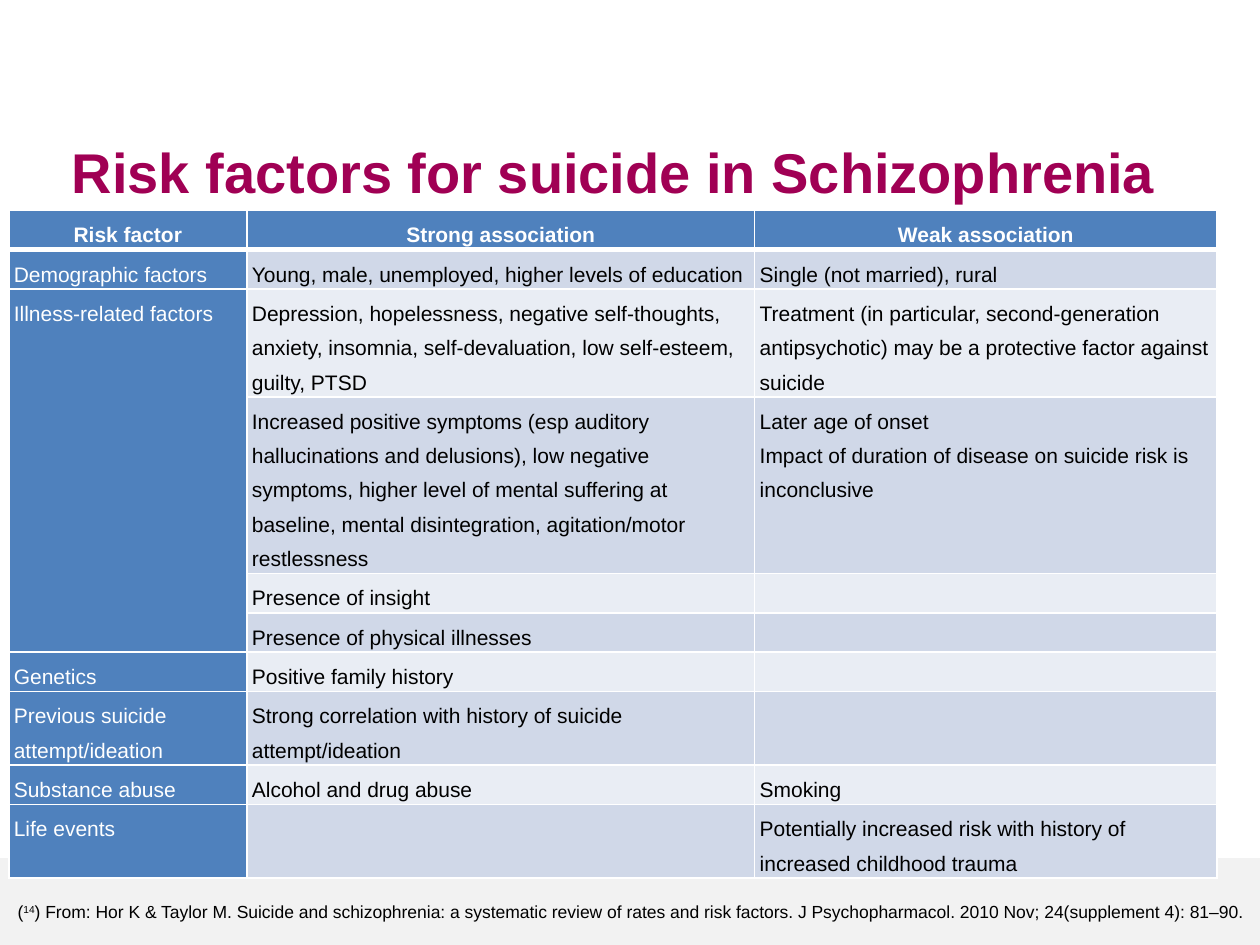
"""Build a slide with a table of risk factors for suicide in schizophrenia."""
import pptx
import pptx.util
import pptx.dml.color
import pptx.enum.shapes
import pptx.enum.text
import pptx.oxml
from lxml import etree

Inches, Pt = pptx.util.Inches, pptx.util.Pt
ALIGN = pptx.enum.text.PP_ALIGN
MIDDLE = pptx.enum.text.MSO_ANCHOR.MIDDLE

TITLE = "Risk factors for suicide in Schizophrenia"
HEADER = ("Risk factor", "Strong association", "Weak association")
ROWS = [
    (1, "Demographic factors", "Young, male, unemployed, higher levels of education",
     "Single (not married), rural"),
    (3, "Illness-related factors",
     "Depression, hopelessness, negative self-thoughts, anxiety, insomnia, "
     "self-devaluation, low self-esteem, guilty, PTSD",
     "Treatment (in particular, second-generation antipsychotic) may be a "
     "protective factor against suicide"),
    (5, "",
     "Increased positive symptoms (esp auditory hallucinations and delusions), "
     "low negative symptoms, higher level of mental suffering at baseline, "
     "mental disintegration, agitation/motor restlessness",
     "Later age of onset\nImpact of duration of disease on suicide risk is inconclusive"),
    (1, "", "Presence of insight", ""),
    (1, "", "Presence of physical illnesses", ""),
    (1, "Genetics", "Positive family history", ""),
    (2, "Previous suicide attempt/ideation",
     "Strong correlation with history of suicide attempt/ideation", ""),
    (1, "Substance abuse", "Alcohol and drug abuse", "Smoking"),
    (2, "Life events", "",
     "Potentially increased risk with history of increased childhood trauma"),
]
MERGED = ((2, 0), (5, 0))
SOURCE = [
    ("(", False),
    ("14", True),
    (") From: Hor K & Taylor M. Suicide and schizophrenia: a systematic review of rates "
     "and risk factors. J Psychopharmacol. 2010 Nov; 24(supplement 4): 81–90.", False),
]
COLORS = {"title": "A00054", "head": "4F81BD", "odd": "D0D8E8", "even": "E9EDF4",
          "white": "FFFFFF", "text": "000000", "footer": "F2F2F2"}
COLS = (1.89, 4.03, 3.67)
LINE = 19.6
PAD_X, PAD_Y = 0.04, 0.02


def rgb(name):
    return pptx.dml.color.RGBColor.from_string(COLORS[name])


def add_run(p, text, size, color, bold=False):
    r = p.add_run()
    r.text = text
    r.font.name, r.font.size, r.font.bold = "Arial", Pt(size), bold
    r.font.color.rgb = rgb(color)
    return r


def set_borders(cell, top, bottom):
    tc_pr = cell._tc.get_or_add_tcPr()
    for side, width in (("L", 1), ("R", 1), ("T", top), ("B", bottom)):
        ln = etree.SubElement(tc_pr, pptx.oxml.ns.qn(f"a:ln{side}"), w=str(Pt(width)))
        fill = etree.SubElement(ln, pptx.oxml.ns.qn("a:solidFill"))
        etree.SubElement(fill, pptx.oxml.ns.qn("a:srgbClr"), val=COLORS["white"])


def fill_cell(cell, text, row, col):
    head = row == 0
    set_borders(cell, 3 if row == 1 else 1, 3 if head else 1)
    cell.fill.solid()
    cell.fill.fore_color.rgb = rgb("head" if head or col == 0 else "odd" if row % 2 else "even")
    cell.margin_left = cell.margin_right = Inches(PAD_X)
    cell.margin_top = cell.margin_bottom = Inches(PAD_Y)
    p = cell.text_frame.paragraphs[0]
    p.alignment = ALIGN.CENTER if head else ALIGN.LEFT
    p.line_spacing = Pt(LINE)
    p.font.size = Pt(12)
    for i, part in enumerate(text.split("\n") if text else []):
        if i:
            p.add_line_break()
        add_run(p, part, 12, "white" if head or col == 0 else "text", head)


def add_risk_table(s):
    rows = [(1, *HEADER)] + ROWS
    heights = [Inches(2 * PAD_Y) + Pt(LINE * row[0]) for row in rows]
    table = s.shapes.add_table(len(rows), len(COLS), Inches(0.07), Inches(1.67),
                               Inches(sum(COLS)), sum(heights)).table
    for column, width in zip(table.columns, COLS):
        column.width = Inches(width)
    for i, (height, (_, *texts)) in enumerate(zip(heights, rows)):
        table.rows[i].height = height
        for j, text in enumerate(texts):
            fill_cell(table.cell(i, j), text, i, j)
    first, last = MERGED
    table.cell(*first).merge(table.cell(*last))


def main():
    prs = pptx.Presentation()
    prs.slide_width, prs.slide_height = Inches(10), Inches(7.5)
    s = prs.slides.add_slide(prs.slide_layouts[5])

    title = s.shapes.title
    title.left, title.top, title.width, title.height = map(Inches, (0.47, 1.01, 9.65, 0.77))
    tf = title.text_frame
    tf.vertical_anchor = MIDDLE
    p = tf.paragraphs[0]
    p.alignment, p.line_spacing = ALIGN.LEFT, 0.9
    add_run(p, TITLE, 32, "title", True)

    band = s.shapes.add_shape(pptx.enum.shapes.MSO_SHAPE.RECTANGLE, 0, Inches(6.81),
                              prs.slide_width, Inches(0.69))
    band.shadow.inherit = False
    band.fill.solid()
    band.fill.fore_color.rgb = rgb("footer")
    band.line.fill.background()

    add_risk_table(s)

    tf = s.shapes.add_textbox(0, Inches(7.1), prs.slide_width, Inches(0.27)).text_frame
    tf.word_wrap = True
    p = tf.paragraphs[0]
    p.alignment = ALIGN.CENTER
    for text, raised in SOURCE:
        r = add_run(p, text, 10, "text")
        if raised:
            r.font._element.set("baseline", "30000")

    prs.save("out.pptx")


if __name__ == "__main__":
    main()
